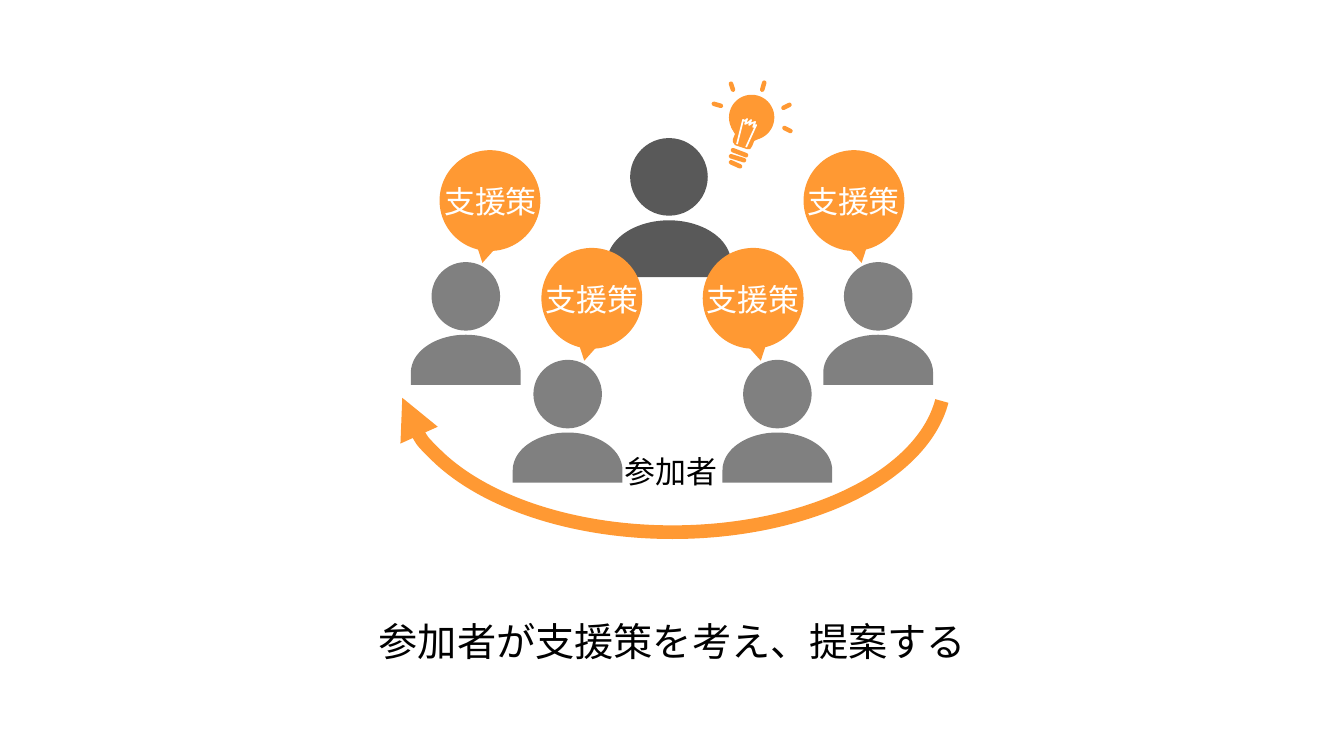
import math

from lxml import etree
from pptx import Presentation
from pptx.dml.color import RGBColor
from pptx.enum.shapes import MSO_CONNECTOR, MSO_SHAPE
from pptx.enum.text import MSO_ANCHOR, PP_ALIGN
from pptx.oxml.ns import qn
from pptx.util import Inches, Pt

OVAL, TRIANGLE, ARC = MSO_SHAPE.OVAL, MSO_SHAPE.ISOSCELES_TRIANGLE, MSO_SHAPE.ARC
STRAIGHT = MSO_CONNECTOR.STRAIGHT
TOP, MIDDLE = MSO_ANCHOR.TOP, MSO_ANCHOR.MIDDLE
CENTER = PP_ALIGN.CENTER

FONT = "Noto Sans CJK JP"
ORANGE, DARK, GRAY = "FF9933", "595959", "808080"
BLACK, WHITE = "000000", "FFFFFF"

HEAD = 0.68
BUBBLE = 1.0
PARTICIPANTS = [(7.37, 3.57, False), (8.37, 2.6, False),
                (5.29, 3.57, True), (4.28, 2.6, True)]

RAYS = [(0.09, 0.23, 0.16, 0.25), (0.26, 0.03, 0.28, 0.09), (0.59, 0.02, 0.57, 0.09),
        (0.78, 0.27, 0.84, 0.24), (0.79, 0.47, 0.85, 0.5)]
SCREW_BASE = [(0.28, 0.69, 0.41, 0.74), (0.26, 0.75, 0.39, 0.79), (0.26, 0.81, 0.35, 0.85)]
NECK = [(0.26, 0.46), (0.3, 0.53), (0.28, 0.58), (0.28, 0.61), (0.3, 0.64),
        (0.42, 0.68), (0.45, 0.68), (0.47, 0.65), (0.49, 0.6), (0.56, 0.56)]
FILAMENT = [(0.32, 0.63), (0.38, 0.39), (0.4, 0.4), (0.42, 0.38), (0.4, 0.43), (0.44, 0.41),
            (0.46, 0.39), (0.44, 0.44), (0.47, 0.42), (0.5, 0.41), (0.48, 0.46),
            (0.51, 0.44), (0.41, 0.66)]


def rgb(color):
    """Turn a hex string into a colour."""
    return RGBColor.from_string(color)


def paint(shape, fill=None, line=None, weight=1):
    """Set fill and outline, without a shadow."""
    shape.shadow.inherit = False
    if fill:
        shape.fill.solid()
        shape.fill.fore_color.rgb = rgb(fill)
    else:
        shape.fill.background()
    if line:
        shape.line.color.rgb = rgb(line)
        shape.line.width = Pt(weight)
    else:
        shape.line.fill.background()


def add_preset(slide, kind, left, top, width, height, **style):
    """Add a painted preset shape."""
    shape = slide.shapes.add_shape(kind, Inches(left), Inches(top), Inches(width), Inches(height))
    paint(shape, **style)
    return shape


def add_outline(slide, left, top, points, close=True, **style):
    """Add a freeform through points measured from left and top."""
    corners = [(Inches(left + x), Inches(top + y)) for x, y in points]
    builder = slide.shapes.build_freeform(*corners[0])
    builder.add_line_segments(corners[1:], close=close)
    paint(builder.convert_to_shape(), **style)


def add_stroke(slide, left, top, ends, color, weight):
    """Add a straight line with round caps."""
    x1, y1, x2, y2 = ends
    stroke = slide.shapes.add_connector(STRAIGHT, Inches(left + x1), Inches(top + y1),
                                        Inches(left + x2), Inches(top + y2))
    stroke.line.color.rgb = rgb(color)
    stroke.line.width = Pt(weight)
    stroke.line._get_or_add_ln().set("cap", "rnd")
    etree.SubElement(stroke._element.spPr, qn("a:effectLst"))


def add_text(slide, text, left, top, width, height, size=22.1, color=BLACK,
             anchor=MIDDLE, spacing=1.0, before=0, insets=(0.12, 0, 0.12, 0.05)):
    """Add one centred paragraph in a wrapping text box."""
    frame = slide.shapes.add_textbox(Inches(left), Inches(top), Inches(width),
                                     Inches(height)).text_frame
    frame.word_wrap = True
    frame.vertical_anchor = anchor
    (frame.margin_left, frame.margin_top,
     frame.margin_right, frame.margin_bottom) = map(Inches, insets)
    paragraph = frame.paragraphs[0]
    paragraph.alignment = CENTER
    paragraph.line_spacing = spacing
    paragraph.space_before = Pt(before)
    run = paragraph.add_run()
    run.text = text
    run.font.name = FONT
    run.font.size = Pt(size)
    run.font.color.rgb = rgb(color)
    etree.SubElement(run._r.get_or_add_rPr(), qn("a:ea")).set("typeface", FONT)


def add_person(slide, left, top, head, color):
    """Draw a head and shoulders, scaled from the head's box."""
    add_preset(slide, OVAL, left, top, head, head, fill=color)
    half, height, curve = head * 0.8, head * 0.73, head * 0.55
    dome = [(-half * math.cos(math.radians(a)), curve * (1 - math.sin(math.radians(a))))
            for a in range(0, 181, 3)]
    add_outline(slide, left + head / 2, top + head * 1.06,
                dome + [(half, height), (-half, height)], fill=color)


def add_participant(slide, left, top, mirrored):
    """Draw a participant with a speech bubble above the head's box."""
    def place(offset, width):
        """Give the left edge of a part, mirrored about the head if asked."""
        return left + (HEAD - offset - width if mirrored else offset)

    add_preset(slide, OVAL, place(-0.4, BUBBLE), top - 1.11, BUBBLE, BUBBLE, fill=ORANGE)
    pointer = add_preset(slide, TRIANGLE, place(0.04, 0.23), top - 0.19, 0.23, 0.2, fill=ORANGE)
    pointer.rotation = 191.9 if mirrored else 168.1
    add_text(slide, "支援策", place(-0.53, 1.25), top - 0.93, 1.25, 0.7, color=WHITE)
    add_person(slide, left, top, HEAD, GRAY)


def add_bulb(slide, left, top):
    """Draw the shining light bulb."""
    for ends in RAYS + SCREW_BASE:
        add_stroke(slide, left, top, ends, ORANGE, 3.2)
    add_preset(slide, OVAL, left + 0.24, top + 0.14, 0.45, 0.45, fill=ORANGE)
    add_outline(slide, left, top, NECK, fill=ORANGE)
    add_outline(slide, left, top, FILAMENT, close=False, line=WHITE, weight=1.2)


def add_cycle_arrow(slide, left, top, width, height):
    """Draw the curved arrow that passes below the participants."""
    arrow = add_preset(slide, ARC, left, top, width, height, line=ORANGE, weight=9.75)
    arrow.adjustments[0] = 2.803
    arrow.adjustments[1] = 105.607
    etree.SubElement(arrow.line._get_or_add_ln(), qn("a:tailEnd")).set("type", "triangle")


def main():
    """Build and save the slide."""
    deck = Presentation()
    deck.slide_width, deck.slide_height = Inches(13.33), Inches(7.5)
    slide = deck.slides.add_slide(deck.slide_layouts[6])
    add_text(slide, "参加者が支援策を考え、提案する", 0.92, 6.13, 11.5, 0.6, size=28,
             anchor=TOP, spacing=0.9, before=10, insets=(0.1, 0.05, 0.1, 0.05))
    add_cycle_arrow(slide, 3.97, 2.24, 5.4, 3.04)
    add_person(slide, 6.25, 1.37, 0.77, DARK)
    add_text(slide, "参加者", 5.65, 4.33, 2.01, 0.62, spacing=1.3)
    for left, top, mirrored in PARTICIPANTS:
        add_participant(slide, left, top, mirrored)
    add_bulb(slide, 6.99, 0.8)
    deck.save("out.pptx")


if __name__ == "__main__":
    main()
